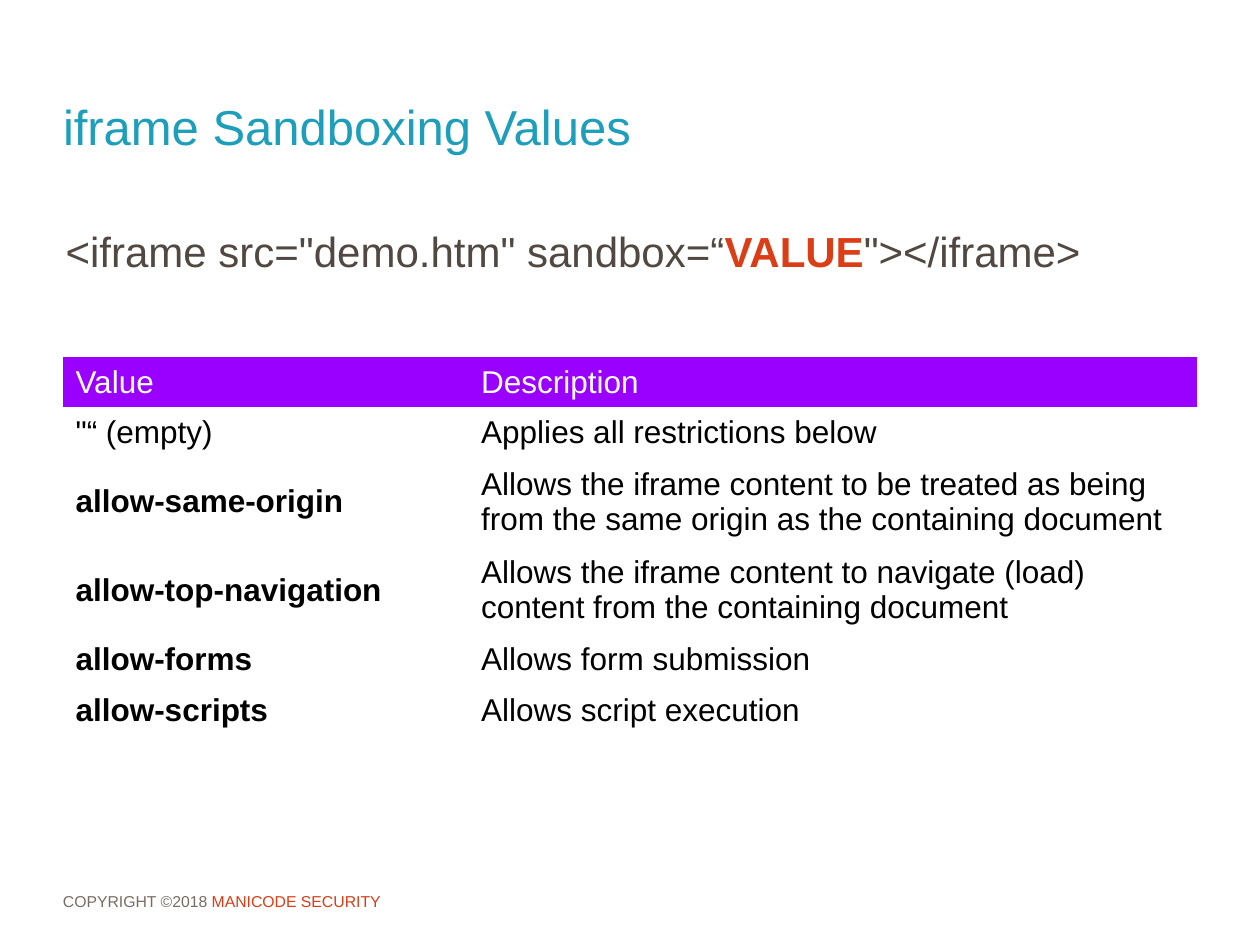
from dataclasses import dataclass

from pptx import Presentation
from pptx.dml.color import RGBColor
from pptx.enum.text import MSO_ANCHOR, PP_ALIGN
from pptx.util import Pt


@dataclass(frozen=True)
class Theme:
    font: str = "Arial"
    title: str = "1D9EBA"
    code: str = "514841"
    accent: str = "DB3D16"
    footer: str = "7A6C62"
    header_fill: str = "9900FF"
    header_text: str = "FFFFFF"
    body: str = "000000"
    title_size: int = 28
    code_size: int = 24
    table_size: int = 18
    footer_size: int = 9


THEME = Theme()
LEFT, WIDTH = 36, 648
COLUMN_WIDTHS = (231.8, 416.2)
ONE_LINE, TWO_LINES = 27.4, 47.7
NO_GRID_STYLE = "{2D5ABB26-0587-4C30-8999-92F81FD0307C}"

HEADER = ("Value", "Description")
VALUES = [
    ("\"“ (empty)", "Applies all restrictions below", ONE_LINE),
    ("allow-same-origin",
     "Allows the iframe content to be treated as being from the same origin "
     "as the containing document", TWO_LINES),
    ("allow-top-navigation",
     "Allows the iframe content to navigate (load) content from the "
     "containing document", TWO_LINES),
    ("allow-forms", "Allows form submission", ONE_LINE),
    ("allow-scripts", "Allows script execution", ONE_LINE),
]


def add_text(paragraph, text, *, size, color, bold=False):
    run = paragraph.add_run()
    run.text = text
    run.font.name = THEME.font
    run.font.size = Pt(size)
    run.font.bold = bold
    run.font.color.rgb = RGBColor.from_string(color)


def set_frame(frame, anchor, margins=(0, 0, 0, 0)):
    frame.word_wrap = True
    frame.vertical_anchor = anchor
    (frame.margin_left, frame.margin_top,
     frame.margin_right, frame.margin_bottom) = map(Pt, margins)
    return frame.paragraphs[0]


def add_title(slide, text):
    title = slide.shapes.title
    title.left, title.top, title.width, title.height = map(Pt, (LEFT, 36, WIDTH, 72))
    paragraph = set_frame(title.text_frame, MSO_ANCHOR.MIDDLE)
    paragraph.alignment = PP_ALIGN.LEFT
    add_text(paragraph, text, size=THEME.title_size, color=THEME.title)


def add_text_box(slide, box, anchor, margins=(0, 0, 0, 0)):
    shape = slide.shapes.add_textbox(*map(Pt, box))
    return set_frame(shape.text_frame, anchor, margins)


def add_code_line(slide):
    paragraph = add_text_box(slide, (22.5, 123, 610, 65.5), MSO_ANCHOR.TOP,
                             (7.2, 6, 7.2, 3.6))
    paragraph.alignment = PP_ALIGN.CENTER
    size = THEME.code_size
    add_text(paragraph, "<iframe src=\"demo.htm\" sandbox=“", size=size, color=THEME.code)
    add_text(paragraph, "VALUE", size=size, color=THEME.accent, bold=True)
    add_text(paragraph, "\"></iframe>", size=size, color=THEME.code)


def fill_cell(cell, text, *, color, bold=False, fill=None):
    cell.vertical_anchor = MSO_ANCHOR.MIDDLE
    if fill:
        cell.fill.solid()
        cell.fill.fore_color.rgb = RGBColor.from_string(fill)
    else:
        cell.fill.background()
    add_text(cell.text_frame.paragraphs[0], text,
             size=THEME.table_size, color=color, bold=bold)


def add_values_table(slide):
    heights = [ONE_LINE] + [height for _, _, height in VALUES]
    table = slide.shapes.add_table(
        len(heights), len(HEADER),
        Pt(LEFT), Pt(204), Pt(WIDTH), Pt(sum(heights))).table
    table.horz_banding = False
    table._tbl.tblPr[0].text = NO_GRID_STYLE
    for column, width in zip(table.columns, COLUMN_WIDTHS):
        column.width = Pt(width)
    for row, height in zip(table.rows, heights):
        row.height = Pt(height)

    for column, text in enumerate(HEADER):
        fill_cell(table.cell(0, column), text,
                  color=THEME.header_text, fill=THEME.header_fill)
    for row, (value, description, _) in enumerate(VALUES, start=1):
        fill_cell(table.cell(row, 0), value, color=THEME.body,
                  bold=value.startswith("allow-"))
        fill_cell(table.cell(row, 1), description, color=THEME.body)


def add_footer(slide):
    paragraph = add_text_box(slide, (LEFT, 500.4, WIDTH, 28.8), MSO_ANCHOR.MIDDLE)
    size = THEME.footer_size
    add_text(paragraph, "COPYRIGHT ©2018 ", size=size, color=THEME.footer)
    add_text(paragraph, "MANICODE SECURITY", size=size, color=THEME.accent)


def main():
    presentation = Presentation()
    presentation.slide_width, presentation.slide_height = Pt(720), Pt(540)
    slide = presentation.slides.add_slide(presentation.slide_layouts[5])

    # Heading and code sample
    add_title(slide, "iframe Sandboxing Values")
    add_code_line(slide)

    # Sandbox values
    add_values_table(slide)

    # Copyright line
    add_footer(slide)
    presentation.save("out.pptx")


if __name__ == "__main__":
    main()
